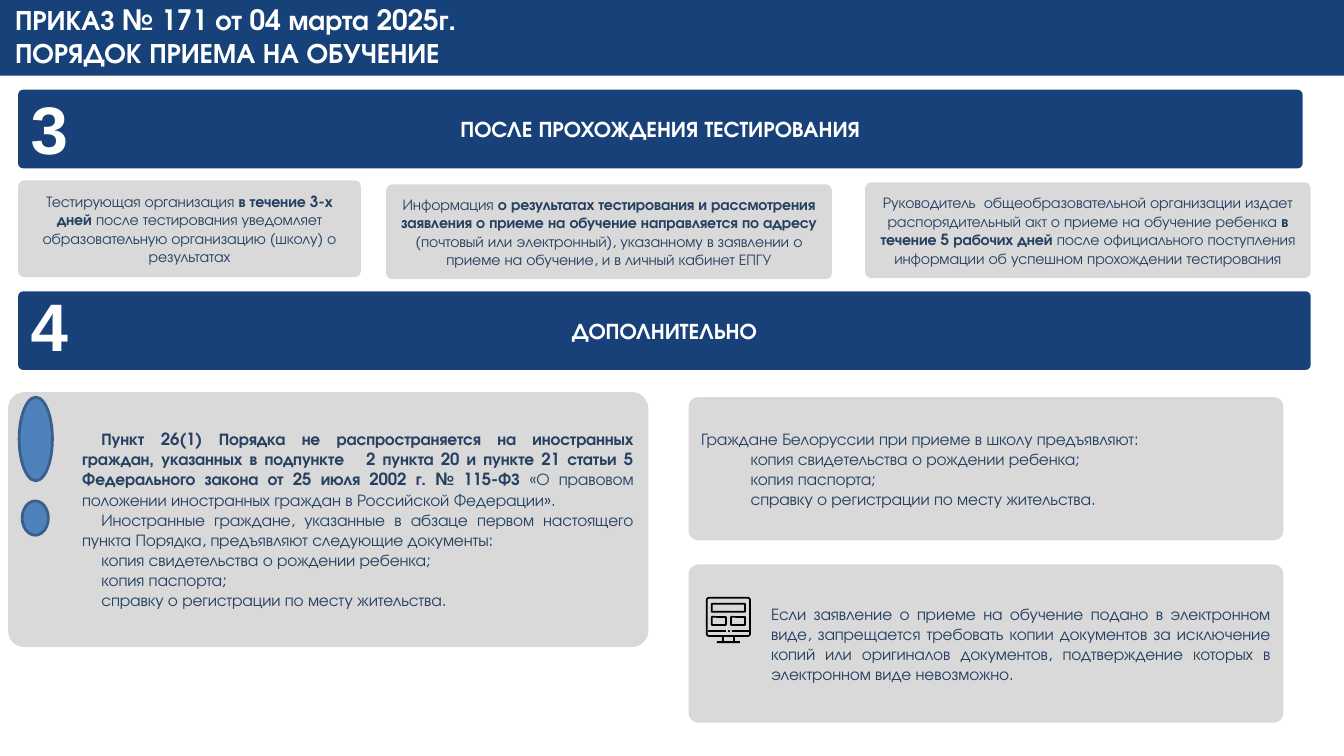
from dataclasses import dataclass

from pptx import Presentation
from pptx.dml.color import RGBColor
from pptx.enum.shapes import MSO_SHAPE
from pptx.enum.text import MSO_ANCHOR, PP_ALIGN
from pptx.util import Inches, Pt


@dataclass(frozen=True)
class Theme:
    header: RGBColor = RGBColor.from_string("174179")
    band: RGBColor = RGBColor.from_string("184179")
    card: RGBColor = RGBColor.from_string("D9D9D9")
    text: RGBColor = RGBColor.from_string("254061")
    white: RGBColor = RGBColor.from_string("FFFFFF")
    black: RGBColor = RGBColor.from_string("000000")
    mark: RGBColor = RGBColor.from_string("4F81BD")
    mark_line: RGBColor = RGBColor.from_string("3A5F8C")
    font: str = "TeX Gyre Adventor"
    number_font: str = "Arial"
    title_size: int = 20
    band_size: int = 16
    step_size: int = 11
    note_size: int = 12
    number_size: int = 48


theme = Theme()


def add_block(kind, place, fill=None, line=None, weight=2):
    """Add a preset shape; place is left, top, width, height in inches."""
    block = page.shapes.add_shape(kind, *[Inches(value) for value in place])
    block.shadow.inherit = False
    if kind == MSO_SHAPE.ROUNDED_RECTANGLE:
        block.adjustments[0] = 0.064
    if fill is None:
        block.fill.background()
    else:
        block.fill.solid()
        block.fill.fore_color.rgb = fill
    if line is None:
        block.line.fill.background()
    else:
        block.line.color.rgb = line
        block.line.width = Pt(weight)
    return block


def write(box, paragraphs, size, color, align, bold=None, font=theme.font, spacing=-10):
    """Fill a box; a paragraph is (left margin, first line indent, [(text, bold), ...])."""
    frame = box.text_frame
    frame.word_wrap = True
    for index, (margin, indent, spans) in enumerate(paragraphs):
        para = frame.add_paragraph() if index else frame.paragraphs[0]
        properties = para._p.get_or_add_pPr()
        properties.set("marL", str(Inches(margin)))
        properties.set("indent", str(Inches(indent)))
        para.alignment = align
        para.font.name = font
        para.font.size = Pt(size)
        para.font.color.rgb = color
        para.font.bold = bold
        for text, strong in spans:
            for number, line in enumerate(text.split("\n")):
                if number:
                    para.add_line_break()
                span = para.add_run()
                span.text = line
                if strong:
                    span.font.bold = True
                if spacing:
                    span._r.get_or_add_rPr().set("spc", str(spacing))


deck = Presentation()
deck.slide_width, deck.slide_height = Inches(13.33), Inches(7.5)
page = deck.slides.add_slide(deck.slide_layouts[6])

# Header with the title
add_block(MSO_SHAPE.RECTANGLE, (0, 0, 13.33, 0.75), theme.header)
title = page.shapes.add_textbox(Inches(0.14), Inches(0), Inches(10.96), Inches(0.69))
frame = title.text_frame
frame.margin_left = frame.margin_right = frame.margin_bottom = 0
frame.margin_top = Inches(0.02)
write(title, [(0.01, 0, [("ПРИКАЗ № 171 от 04 марта 2025г.\nПОРЯДОК ПРИЕМА НА ОБУЧЕНИЕ", False)])],
      theme.title_size, theme.white, PP_ALIGN.LEFT, bold=True)

# Numbered section bands
bands = [
    ("3", "ПОСЛЕ ПРОХОЖДЕНИЯ ТЕСТИРОВАНИЯ", 0.89, 12.74, 0.82),
    ("4", "ДОПОЛНИТЕЛЬНО", 2.89, 12.82, 2.77),
]
for number, heading, top, width, number_top in bands:
    band = add_block(MSO_SHAPE.ROUNDED_RECTANGLE, (0.18, top, width, 0.78), theme.band)
    band.text_frame.vertical_anchor = MSO_ANCHOR.MIDDLE
    write(band, [(0, 0, [(heading, False)])], theme.band_size, theme.white,
          PP_ALIGN.CENTER, bold=True, spacing=0)
    label = page.shapes.add_textbox(Inches(0.19), Inches(number_top), Inches(0.6), Inches(0.91))
    write(label, [(0, 0, [(number, False)])], theme.number_size, theme.white,
          PP_ALIGN.CENTER, bold=True, font=theme.number_font, spacing=0)

# Grey cards: three centred steps, then three justified notes
steps = [
    ((0.18, 1.79, 3.4, 0.96), [(0, 0, [
        ("Тестирующая организация ", False),
        ("в течение 3-х дней ", True),
        ("после тестирования уведомляет образовательную организацию (школу) о результатах", False)])]),
    ((3.83, 1.83, 4.42, 0.94), [(0, 0, [
        ("Информация ", False),
        ("о результатах тестирования и рассмотрения заявления о приеме на обучение "
         "направляется по адресу ", True),
        ("(почтовый или электронный), указанному в заявлении о приеме на обучение, "
         "и в личный кабинет ЕПГУ", False)])]),
    ((8.58, 1.81, 4.42, 0.95), [(0, 0, [
        ("Руководитель  общеобразовательной организации издает распорядительный акт "
         "о приеме на обучение ребенка ", False),
        ("в течение 5 рабочих дней ", True),
        ("после официального поступления информации об успешном прохождении тестирования", False)])]),
]
documents = [
    "копия свидетельства о рождении ребенка;",
    "копия паспорта;",
    "справку о регистрации по месту жительства.",
]
notes = [
    ((0.08, 3.89, 6.35, 2.53), [
        (0.59, 0.19, [
            ("Пункт 26(1) Порядка не распространяется на иностранных граждан, указанных "
             "в подпункте   2 пункта 20 и пункте 21 статьи 5 Федерального закона "
             "от 25 июля 2002 г. № 115-ФЗ", True),
            (" «О правовом положении иностранных граждан в Российской Федерации».", False)]),
        (0.59, 0.19, [
            ("Иностранные граждане, указанные в абзаце первом настоящего пункта Порядка, "
             "предъявляют следующие документы:", False)]),
        *[(0.59, 0.19, [(document, False)]) for document in documents]]),
    ((6.83, 3.94, 5.9, 1.42), [
        (0, 0, [("Граждане Белоруссии при приеме в школу предъявляют:", False)]),
        *[(0, 0.49, [(document, False)]) for document in documents]]),
    ((6.83, 5.6, 5.9, 1.57), [
        (0.69, 0, [
            ("Если заявление о приеме на обучение подано в электронном виде, запрещается "
             "требовать копии документов за исключение копий или оригиналов документов, "
             "подтверждение которых в электронном виде невозможно.", False)])]),
]
for cards, size, align in [(steps, theme.step_size, PP_ALIGN.CENTER),
                           (notes, theme.note_size, PP_ALIGN.JUSTIFY)]:
    for place, paragraphs in cards:
        card = add_block(MSO_SHAPE.ROUNDED_RECTANGLE, place, theme.card)
        card.text_frame.vertical_anchor = MSO_ANCHOR.MIDDLE
        write(card, paragraphs, size, theme.text, align)

# Exclamation mark
for place in [(0.19, 3.94, 0.33, 0.83), (0.22, 4.97, 0.26, 0.34)]:
    add_block(MSO_SHAPE.OVAL, place, theme.mark, theme.mark_line)

# Monitor icon: screen and panels in outline, then bezel, dot and stand
for place in [(7.01, 5.93, 0.43, 0.38), (7.06, 5.99, 0.33, 0.08),
              (7.06, 6.12, 0.14, 0.08), (7.25, 6.12, 0.14, 0.08)]:
    add_block(MSO_SHAPE.ROUNDED_RECTANGLE, place, line=theme.black, weight=1.25)
for place in [(7.02, 6.25, 0.18, 0.02), (7.26, 6.25, 0.17, 0.02),
              (7.16, 6.32, 0.02, 0.04), (7.27, 6.32, 0.02, 0.04), (7.11, 6.36, 0.23, 0.02)]:
    add_block(MSO_SHAPE.RECTANGLE, place, theme.black)
add_block(MSO_SHAPE.OVAL, (7.22, 6.25, 0.02, 0.02), theme.black)

deck.save("out.pptx")
